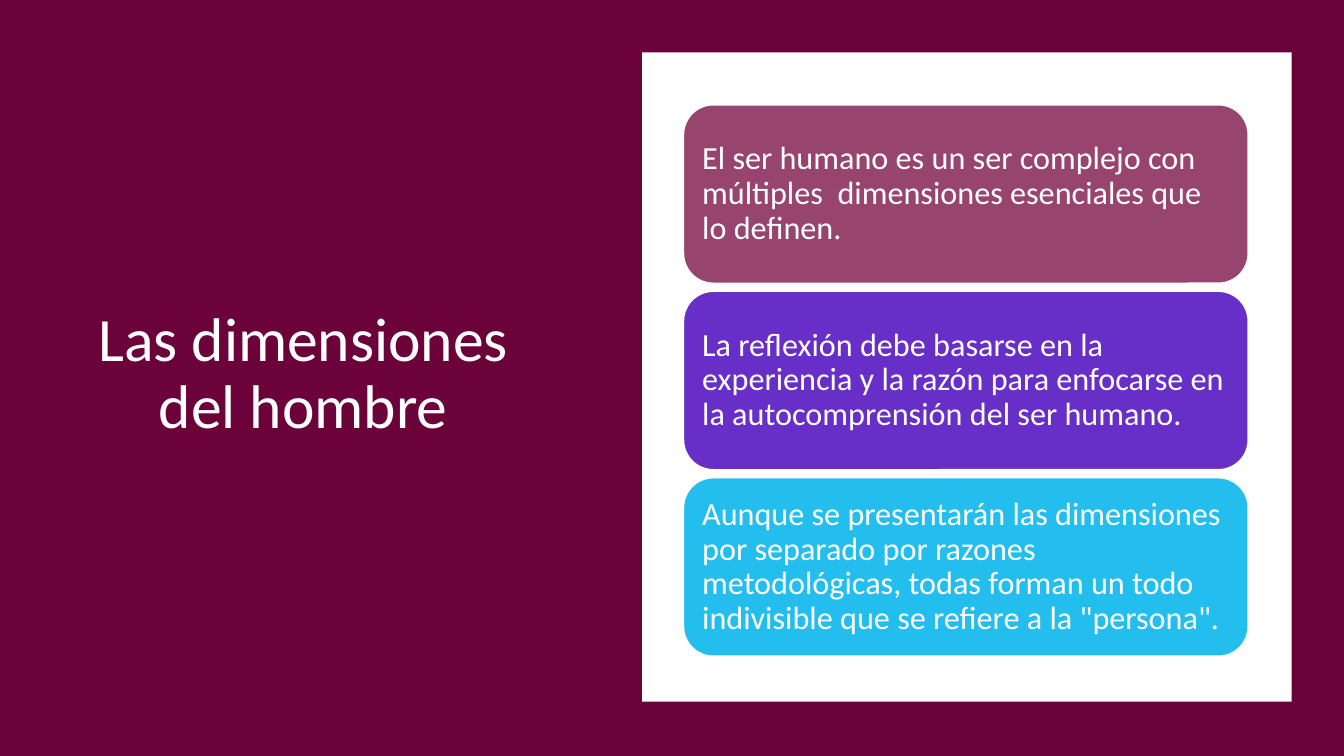
from lxml.etree import SubElement
from pptx import Presentation
from pptx.dml.color import RGBColor
from pptx.enum.shapes import MSO_SHAPE as SHAPE
from pptx.enum.text import MSO_ANCHOR as ANCHOR, PP_ALIGN as ALIGN
from pptx.oxml.ns import qn
from pptx.util import Inches, Pt


def paint(color_format, hex_color):
    color_format.fill.solid()
    color_format.fill.fore_color.rgb = RGBColor.from_string(hex_color)


def add_panel(kind, left, top, width, height, color):
    panel = slide.shapes.add_shape(
        kind, Inches(left), Inches(top), Inches(width), Inches(height))
    panel.shadow.inherit = False
    panel.line.fill.background()
    paint(panel, color)
    return panel


WIDTH, HEIGHT = 13.33, 7.5
WHITE = "FFFFFF"
CARD_TOP, CARD_HEIGHT, CARD_GAP = 1.04, 1.77, 0.08

IDEAS = [
    ("97446E", "El ser humano es un ser complejo con múltiples  dimensiones "
               "esenciales que lo definen."),
    ("672FC7", "La reflexión debe basarse en la experiencia y la razón para "
               "enfocarse en la autocomprensión del ser humano."),
    ("24BEEE", "Aunque se presentarán las dimensiones por separado por razones "
               "metodológicas, todas forman un todo indivisible que se refiere "
               "a la \"persona\"."),
]

deck = Presentation()
deck.slide_width, deck.slide_height = Inches(WIDTH), Inches(HEIGHT)
slide = deck.slides.add_slide(deck.slide_layouts[5])

add_panel(SHAPE.RECTANGLE, 0, 0, WIDTH, HEIGHT, WHITE)
for wash_color in ("420023", "6E003B"):
    wash = add_panel(SHAPE.RECTANGLE, 0, 0, WIDTH, HEIGHT, wash_color)
    tint = wash._element.spPr.find(qn("a:solidFill"))[0]
    SubElement(tint, qn("a:alpha"), val="90000")

title = slide.shapes.title
slide.shapes._spTree.append(title._element)
title.left, title.top = Inches(0.85), Inches(0.54)
title.width, title.height = Inches(4.32), Inches(6.36)
title.text_frame.text = "Las dimensiones del hombre"
texts = [(title.text_frame, ALIGN.CENTER, 44, 0)]

add_panel(SHAPE.RECTANGLE, 6.37, 0.52, 6.44, 6.44, WHITE)
for row, (card_color, idea) in enumerate(IDEAS):
    card = add_panel(SHAPE.ROUNDED_RECTANGLE, 6.78,
                     CARD_TOP + row * (CARD_HEIGHT + CARD_GAP),
                     5.6, CARD_HEIGHT, card_color)
    paint(card.line, WHITE)
    card.line.width = Pt(1)
    card.text_frame.text = idea
    texts.append((card.text_frame, ALIGN.LEFT, 23, 8))

FRAME_FORMAT = {
    "word_wrap": True, "vertical_anchor": ANCHOR.MIDDLE,
    "margin_left": Inches(0.1), "margin_right": Inches(0.1),
    "margin_top": Inches(0.1), "margin_bottom": Inches(0.1),
}
for frame, alignment, size, space_after in texts:
    for attribute, value in FRAME_FORMAT.items():
        setattr(frame, attribute, value)
    paragraph = frame.paragraphs[0]
    paragraph.alignment = alignment
    paragraph.line_spacing = 0.9
    paragraph.space_after = Pt(space_after)
    font = paragraph.runs[0].font
    font.name, font.size = "Calibri", Pt(size)
    paint(font, WHITE)

deck.save("out.pptx")
